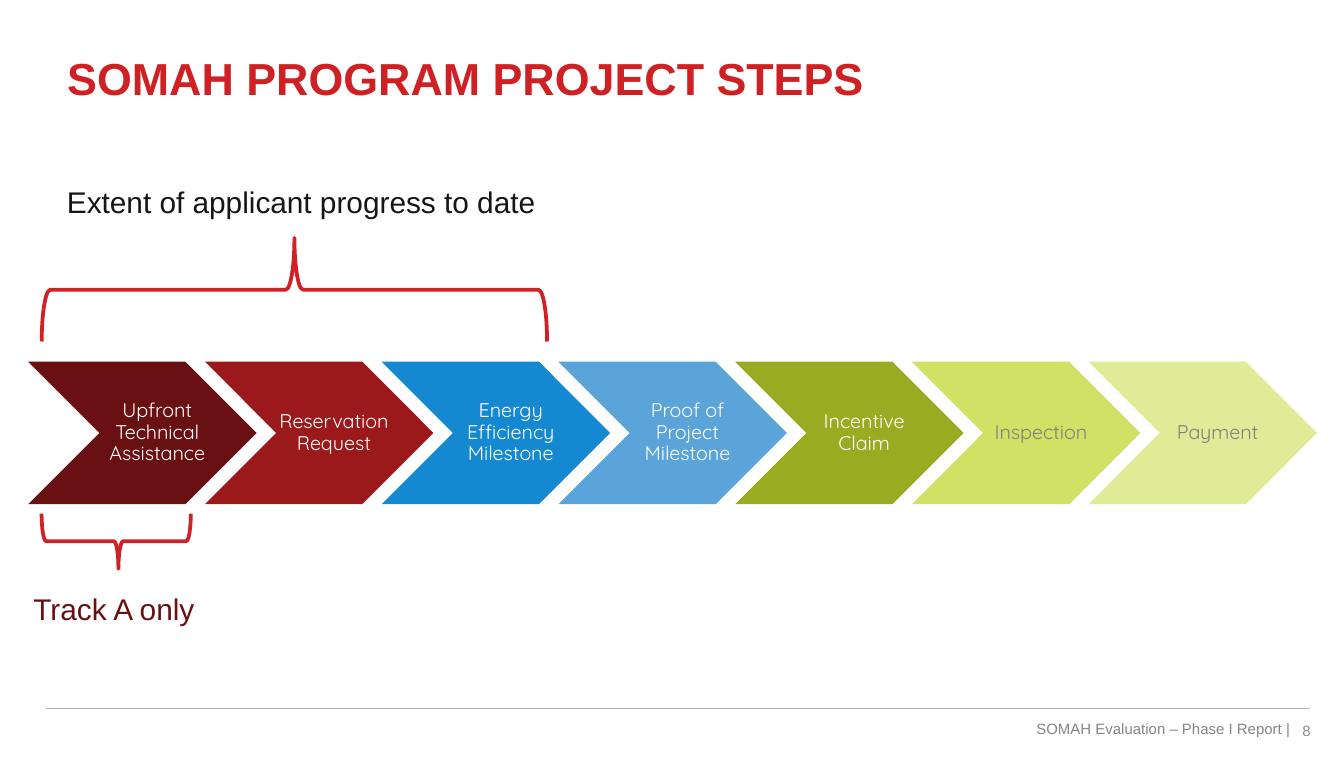
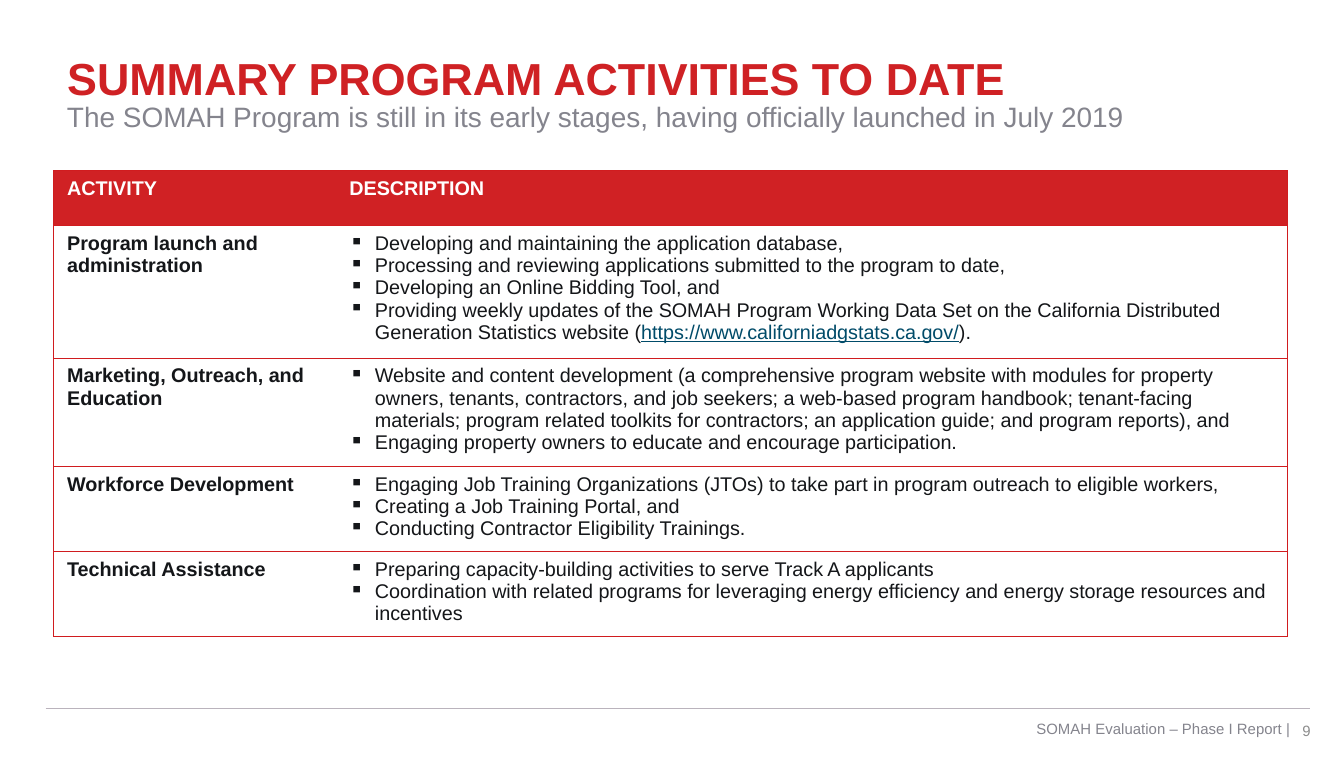
import lxml.etree
import pptx
import pptx.dml.color
import pptx.enum.shapes
import pptx.enum.text
import pptx.oxml.ns
import pptx.util

Inches = pptx.util.Inches
Pt = pptx.util.Pt
ALIGN = pptx.enum.text.PP_ALIGN
ANCHOR = pptx.enum.text.MSO_ANCHOR
SHAPE = pptx.enum.shapes.MSO_SHAPE

RED, BRACE_RED, BORDER_RED, MAROON = "CF2124", "D02124", "D01C1F", "681012"
INK, GRAY, WHITE, LINK = "141619", "84848D", "FFFFFF", "004B69"
FONT, STEP_FONT = "Arial", "Quicksand"
SMALL = 10.6

STEPS = [
    ("Upfront Technical Assistance", MAROON, WHITE),
    ("Reservation Request", "9C191B", WHITE),
    ("Energy Efficiency Milestone", "1488D1", WHITE),
    ("Proof of Project Milestone", "5AA4DA", WHITE),
    ("Incentive Claim", "99AB21", WHITE),
    ("Inspection", "D1E165", "808080"),
    ("Payment", "E0EB98", "808080"),
]

WEBSITE = "https://www.californiadgstats.ca.gov/"
ACTIVITIES = [
    ("Program launch and administration", 0.95, [
        "Developing and maintaining the application database,",
        "Processing and reviewing applications submitted to the program to date,",
        "Developing an Online Bidding Tool, and",
        "Providing weekly updates of the SOMAH Program Working Data Set on the California "
        f"Distributed Generation Statistics website ({WEBSITE}).",
    ]),
    ("Marketing, Outreach, and Education", 0.78, [
        "Website and content development (a comprehensive program website with modules for "
        "property owners, tenants, contractors, and job seekers; a web-based program handbook; "
        "tenant-facing materials; program related toolkits for contractors; an application "
        "guide; and program reports), and",
        "Engaging property owners to educate and encourage participation.",
    ]),
    ("Workforce Development", 0.61, [
        "Engaging Job Training Organizations (JTOs) to take part in program outreach to "
        "eligible workers,",
        "Creating a Job Training Portal, and",
        "Conducting Contractor Eligibility Trainings.",
    ]),
    ("Technical Assistance", 0.61, [
        "Preparing capacity-building activities to serve Track A applicants",
        "Coordination with related programs for leveraging energy efficiency and energy "
        "storage resources and incentives",
    ]),
]


def rgb(value):
    """Turn a hex string into a colour."""
    return pptx.dml.color.RGBColor.from_string(value)


def inches(box):
    """Turn a box of numbers into lengths."""
    return [Inches(length) for length in box]


def format_text(text_frame, size, color, bold=False, align=ALIGN.LEFT, font=FONT):
    """Format every paragraph and run of a text frame."""
    for paragraph in text_frame.paragraphs:
        paragraph.alignment = align
        for run in paragraph.runs:
            run.font.name = font
            run.font.size = Pt(size)
            run.font.bold = bold
            run.font.color.rgb = rgb(color)


def add_text(shapes, box, text, size, color, anchor=ANCHOR.TOP, **style):
    """Add a wrapping text box and return its text frame."""
    text_frame = shapes.add_textbox(*inches(box)).text_frame
    text_frame.word_wrap = True
    text_frame.vertical_anchor = anchor
    text_frame.text = text
    format_text(text_frame, size, color, **style)
    return text_frame


def add_title_slide(presentation, title, number):
    """Add a slide with the shared title, footer rule, footer text and number."""
    slide = presentation.slides.add_slide(presentation.slide_layouts[5])
    placeholder = slide.shapes.title
    placeholder.left, placeholder.top, placeholder.width, placeholder.height = inches(
        (0.4, 0.32, 9, 0.51))
    text_frame = placeholder.text_frame
    text_frame.text = title
    text_frame.auto_size = pptx.enum.text.MSO_AUTO_SIZE.NONE
    text_frame.vertical_anchor = ANCHOR.MIDDLE
    format_text(text_frame, 24, RED, bold=True)

    rule = slide.shapes.add_connector(
        pptx.enum.shapes.MSO_CONNECTOR.STRAIGHT, *inches((0.34, 5.27, 9.75, 5.27)))
    rule.line.color.rgb = rgb("BAB3BC")
    rule.line.width = Pt(0.5)
    lxml.etree.SubElement(rule._element.spPr, pptx.oxml.ns.qn("a:effectLst"))
    footer = "SOMAH Evaluation – Phase I Report |"
    add_text(slide.shapes, (6.32, 5.27, 3.38, 0.3), footer, 8, GRAY,
             ANCHOR.MIDDLE, align=ALIGN.RIGHT)
    add_text(slide.shapes, (9.42, 5.28, 0.43, 0.3), str(number), 8, "8C8C8C",
             ANCHOR.MIDDLE, align=ALIGN.RIGHT)
    return slide


def add_step_chevrons(slide, box):
    """Spread the step chevrons evenly over the box."""
    left, top, width, height = box
    chevron_width = 1.7
    pitch = (width - chevron_width) / (len(STEPS) - 1)
    for index, (label, fill, color) in enumerate(STEPS):
        x = left + index * pitch
        group = slide.shapes.add_group_shape()
        chevron = group.shapes.add_shape(
            SHAPE.CHEVRON, *inches((x, top, chevron_width, height)))
        chevron.shadow.inherit = False
        chevron.fill.solid()
        chevron.fill.fore_color.rgb = rgb(fill)
        chevron.line.fill.background()
        text_frame = add_text(group.shapes, (x + 0.44, top, 1.01, height), label, SMALL, color,
                              ANCHOR.MIDDLE, align=ALIGN.CENTER, font=STEP_FONT)
        text_frame.margin_left = Inches(0.05)
        text_frame.margin_right = text_frame.margin_top = text_frame.margin_bottom = Inches(0.02)
        text_frame.paragraphs[0].line_spacing = 0.9


def add_horizontal_brace(slide, box, rotation, tip=0.5):
    """Add a brace turned on its side so that it covers the box."""
    left, top, width, height = box
    shift = (width - height) / 2
    brace = slide.shapes.add_shape(
        SHAPE.LEFT_BRACE, *inches((left + shift, top - shift, height, width)))
    brace.rotation = rotation
    brace.adjustments[1] = tip
    brace.shadow.inherit = False
    brace.fill.background()
    brace.line.color.rgb = rgb(BRACE_RED)
    brace.line.width = Pt(2)


def set_borders(cell, visible_sides):
    """Draw the given sides of a cell in red and hide the others."""
    properties = cell._tc.get_or_add_tcPr()
    for side in "LRTB":
        line = lxml.etree.SubElement(
            properties, pptx.oxml.ns.qn(f"a:ln{side}"), w=str(Pt(0.75)))
        if side in visible_sides:
            fill = lxml.etree.SubElement(line, pptx.oxml.ns.qn("a:solidFill"))
            lxml.etree.SubElement(fill, pptx.oxml.ns.qn("a:srgbClr"), val=BORDER_RED)
        else:
            lxml.etree.SubElement(line, pptx.oxml.ns.qn("a:noFill"))


def add_bullets(text_frame, items):
    """Write hanging bullets, with the web address underlined."""
    text_frame.text = "\n".join(items)
    for paragraph, item in zip(text_frame.paragraphs, items):
        if WEBSITE in item:
            before, after = item.split(WEBSITE)
            paragraph.text = before
            paragraph.add_run().text = WEBSITE
            paragraph.add_run().text = after
        properties = paragraph._p.get_or_add_pPr()
        properties.set("marL", str(Inches(0.19)))
        properties.set("indent", str(-Inches(0.19)))
        lxml.etree.SubElement(properties, pptx.oxml.ns.qn("a:buChar"), char="▪")
    format_text(text_frame, SMALL, INK)
    for paragraph in text_frame.paragraphs:
        for run in paragraph.runs:
            if run.text == WEBSITE:
                run.font.underline = True
                run.font.color.rgb = rgb(LINK)


def add_activity_table(slide, box):
    """Add the table of activities and their descriptions."""
    table = slide.shapes.add_table(len(ACTIVITIES) + 1, 2, *inches(box)).table
    table.columns[0].width = Inches(2.1)
    table.columns[1].width = Inches(box[2] - 2.1)
    heights = [0.41] + [height for _, height, _ in ACTIVITIES]
    for index, height in enumerate(heights):
        table.rows[index].height = Inches(height)
        for column, outer_side in enumerate("LR"):
            cell = table.cell(index, column)
            set_borders(cell, outer_side + "TB")
            cell.fill.solid()
            cell.fill.fore_color.rgb = rgb(WHITE if index else BRACE_RED)
    for column, heading in enumerate(("ACTIVITY", "DESCRIPTION")):
        text_frame = table.cell(0, column).text_frame
        text_frame.text = heading
        format_text(text_frame, SMALL, WHITE, bold=True)
    for index, (activity, _, items) in enumerate(ACTIVITIES, 1):
        text_frame = table.cell(index, 0).text_frame
        text_frame.text = activity
        format_text(text_frame, SMALL, INK, bold=True)
        add_bullets(table.cell(index, 1).text_frame, items)


def build_steps_slide(presentation):
    """Build the slide of project steps."""
    slide = add_title_slide(presentation, "SOMAH PROGRAM PROJECT STEPS", 8)
    add_step_chevrons(slide, (0.21, 2.69, 9.59, 1.06))
    add_text(slide.shapes, (0.4, 1.32, 3.9, 0.37),
             "Extent of applicant progress to date", 16, INK)
    add_horizontal_brace(slide, (0.31, 1.77, 3.76, 0.77), 90)
    add_horizontal_brace(slide, (0.31, 3.82, 1.11, 0.41), 270, 0.515)
    add_text(slide.shapes, (0.15, 4.34, 1.42, 0.37), "Track A only", 16, MAROON)


def build_activities_slide(presentation):
    """Build the slide of program activities."""
    slide = add_title_slide(presentation, "SUMMARY PROGRAM ACTIVITIES TO DATE", 9)
    subtitle = ("The SOMAH Program is still in its early stages, "
                "having officially launched in July 2019")
    add_text(slide.shapes, (0.4, 0.69, 9, 0.38), subtitle, 15, GRAY)
    add_activity_table(slide, (0.4, 1.27, 9.18, 3.36))


def main():
    """Build and save the presentation."""
    presentation = pptx.Presentation()
    presentation.slide_width = Inches(10)
    presentation.slide_height = Inches(5.63)
    build_steps_slide(presentation)
    build_activities_slide(presentation)
    presentation.save("out.pptx")


if __name__ == "__main__":
    main()
